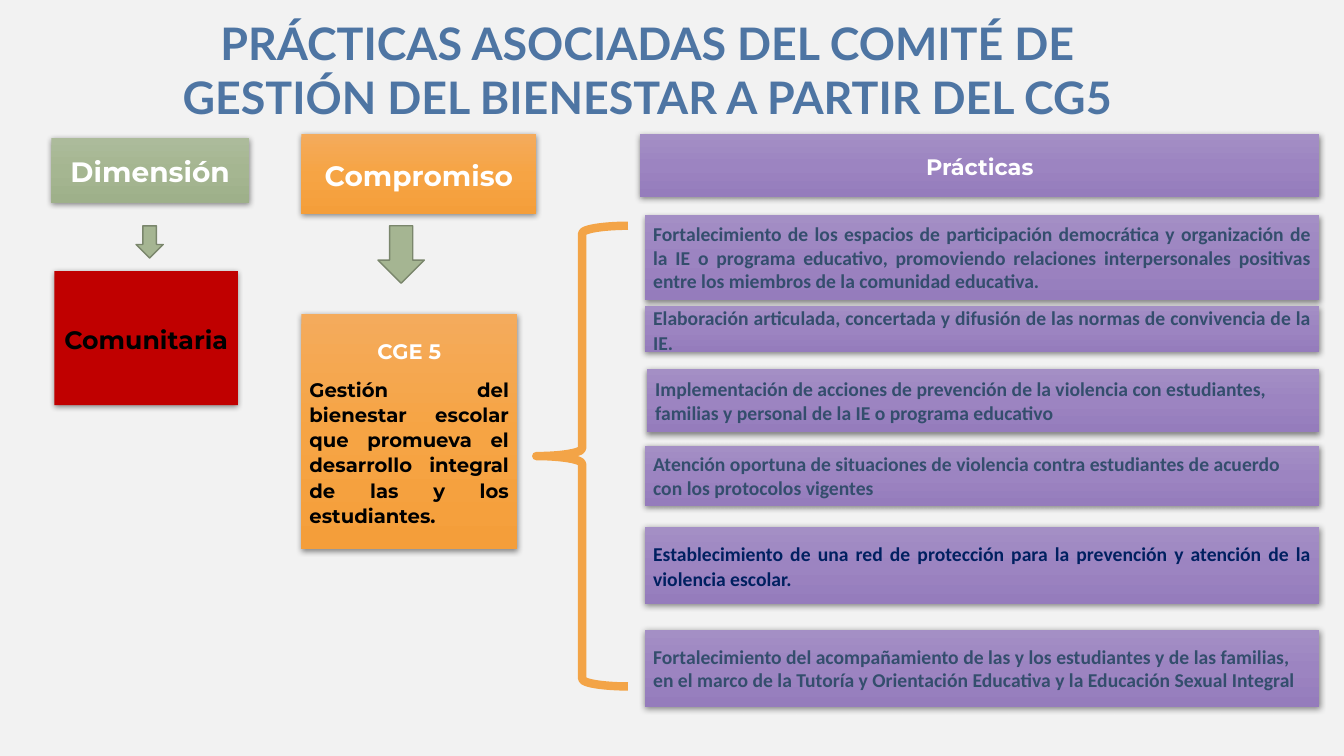
from copy import deepcopy

from lxml.etree import SubElement
from pptx import Presentation
from pptx.dml.color import RGBColor
from pptx.enum.shapes import MSO_SHAPE as Shape
from pptx.enum.text import MSO_ANCHOR as Anchor, PP_ALIGN as Align
from pptx.oxml.ns import qn
from pptx.util import Inches, Pt

COLUMNS, ROWS = 160, 90
GREEN = ("ACBB9B", "A5B691", "9EB08A")
ORANGE = ("F4AB5C", "F6A444", "F49E3A")
PURPLE = ("A48FC5", "9C84C1", "957CBC")
RED, WHITE, BLACK, SLATE, NAVY = "C00000", "FFFFFF", "000000", "344E6D", "002060"


def rgb(value):
    return RGBColor.from_string(value)


def write(paragraph, text, size=14, font="Montserrat", color=WHITE,
          align=Align.CENTER, spacing=1.07, after=0):
    paragraph.alignment = align
    paragraph.line_spacing = spacing
    paragraph.space_after = Pt(after)
    run = paragraph.add_run()
    run.text = text
    run.font.name, run.font.size, run.font.bold = font, Pt(size), True
    run.font.color.rgb = rgb(color)


class Diagram:
    def __init__(self, deck, background):
        self.column = deck.slide_width / COLUMNS
        self.row = deck.slide_height / ROWS
        self.slide = deck.slides.add_slide(deck.slide_layouts[6])
        self.slide.background.fill.solid()
        self.slide.background.fill.fore_color.rgb = rgb(background)

    def place(self, left, top, width, height):
        return (round(left * self.column), round(top * self.row),
                round(width * self.column), round(height * self.row))

    def frame(self, owner, side, edge):
        frame = owner.text_frame
        frame.word_wrap = True
        frame.vertical_anchor = Anchor.MIDDLE
        frame.margin_left = frame.margin_right = Inches(side)
        frame.margin_top = frame.margin_bottom = Inches(edge)
        return frame

    def title(self, text, *area):
        heading = self.slide.shapes.add_textbox(*self.place(*area))
        write(self.frame(heading, 0, 0.1).paragraphs[0], text,
              size=32, font="Lato", color="4E75A3", spacing=1)

    def symbol(self, kind, *area, line, weight, fill=None):
        symbol = self.slide.shapes.add_shape(kind, *self.place(*area))
        symbol.shadow.inherit = False
        if fill:
            symbol.fill.solid()
            symbol.fill.fore_color.rgb = rgb(fill)
        else:
            symbol.fill.background()
        symbol.line.color.rgb = rgb(line)
        symbol.line.width = Pt(weight)

    def shade(self, card, colors):
        card.fill.gradient()
        card.fill.gradient_angle = 270
        stop_list = card._element.spPr.find(qn("a:gradFill")).find(qn("a:gsLst"))
        stop_list.insert(1, deepcopy(stop_list[0]))
        for stop, color, position in zip(card.fill.gradient_stops, colors, (0, 0.5, 1)):
            stop.color.rgb = rgb(color)
            stop.position = position

    def cast_shadow(self, card):
        card.shadow.inherit = False
        effects = card._element.spPr.find(qn("a:effectLst"))
        shadow = SubElement(effects, qn("a:outerShdw"), blurRad=str(Pt(4.4)),
                            dist=str(Pt(1.2)), dir="5400000", rotWithShape="0")
        tint = SubElement(shadow, qn("a:srgbClr"), val=BLACK)
        SubElement(tint, qn("a:alpha"), val="45000")

    def card(self, fill, area, *texts):
        card = self.slide.shapes.add_shape(Shape.RECTANGLE, *self.place(*area))
        if isinstance(fill, str):
            card.fill.solid()
            card.fill.fore_color.rgb = rgb(fill)
        else:
            self.shade(card, fill)
        card.line.fill.background()
        self.cast_shadow(card)
        frame = self.frame(card, 0.08, 0.04)
        for index, (text, style) in enumerate(texts):
            paragraph = frame.add_paragraph() if index else frame.paragraphs[0]
            write(paragraph, text, **style)


def main():
    deck = Presentation()
    deck.slide_width, deck.slide_height = Inches(13.33), Inches(7.5)
    diagram = Diagram(deck, "F2F2F2")
    diagram.title("PRÁCTICAS ASOCIADAS DEL COMITÉ DE GESTIÓN DEL BIENESTAR A PARTIR DEL CG5",
                  14.04, 0, 126.12, 16.56)

    headings = [
        ("Dimensión", GREEN, (6.12, 16.44, 23.52, 7.68), 20, WHITE),
        ("Compromiso", ORANGE, (35.88, 15.96, 27.96, 9.48), 20, WHITE),
        ("Prácticas", PURPLE, (76.2, 15.96, 80.88, 7.44), 16, WHITE),
        ("Comunitaria", RED, (6.48, 32.28, 21.84, 15.96), 18, BLACK),
    ]
    for text, fill, area, size, color in headings:
        diagram.card(fill, area, (text, dict(size=size, color=color)))

    diagram.card(
        ORANGE, (35.88, 37.44, 25.68, 27.96),
        ("CGE 5", dict(size=15, after=9)),
        ("Gestión del bienestar escolar que promueva el desarrollo integral "
         "de las y los estudiantes.", dict(color=BLACK, align=Align.JUSTIFY)))

    right = 157.08
    practices = [
        ("Fortalecimiento de los espacios de participación democrática y organización de la IE "
         "o programa educativo, promoviendo relaciones interpersonales positivas entre los "
         "miembros de la comunidad educativa.",
         76.8, 25.56, 10.2, SLATE, Align.JUSTIFY, 1),
        ("Elaboración articulada, concertada y difusión de las normas de convivencia de la IE.",
         76.8, 36.48, 5.4, SLATE, Align.JUSTIFY, 1.07),
        ("Implementación de acciones de prevención de la violencia con estudiantes, familias "
         "y personal de la IE o programa educativo",
         77.04, 43.92, 7.56, SLATE, Align.LEFT, 1),
        ("Atención oportuna de situaciones de violencia contra estudiantes de acuerdo con los "
         "protocolos vigentes",
         76.8, 53.04, 7.2, SLATE, Align.LEFT, 1),
        ("Establecimiento de una red de protección para la prevención y atención de la "
         "violencia escolar.",
         76.8, 62.76, 9.12, NAVY, Align.JUSTIFY, 1.07),
        ("Fortalecimiento del acompañamiento de las y los estudiantes y de las familias, en el "
         "marco de la Tutoría y Orientación Educativa y la Educación Sexual Integral",
         76.8, 75, 9.12, SLATE, Align.LEFT, 1),
    ]
    for text, left, top, height, color, align, spacing in practices:
        diagram.card(PURPLE, (left, top, right - left, height),
                     (text, dict(font="Calibri", color=color, align=align, spacing=spacing)))

    flow_top = 26.88
    for left, width, height in ((16.2, 3.24, 3.84), (45, 5.52, 6.84)):
        diagram.symbol(Shape.DOWN_ARROW, left, flow_top, width, height,
                       line="7A866C", weight=1, fill="A5B592")
    diagram.symbol(Shape.LEFT_BRACE, 63.84, flow_top, 10.92, 54.84, line="F3A447", weight=6)
    deck.save("out.pptx")


if __name__ == "__main__":
    main()
